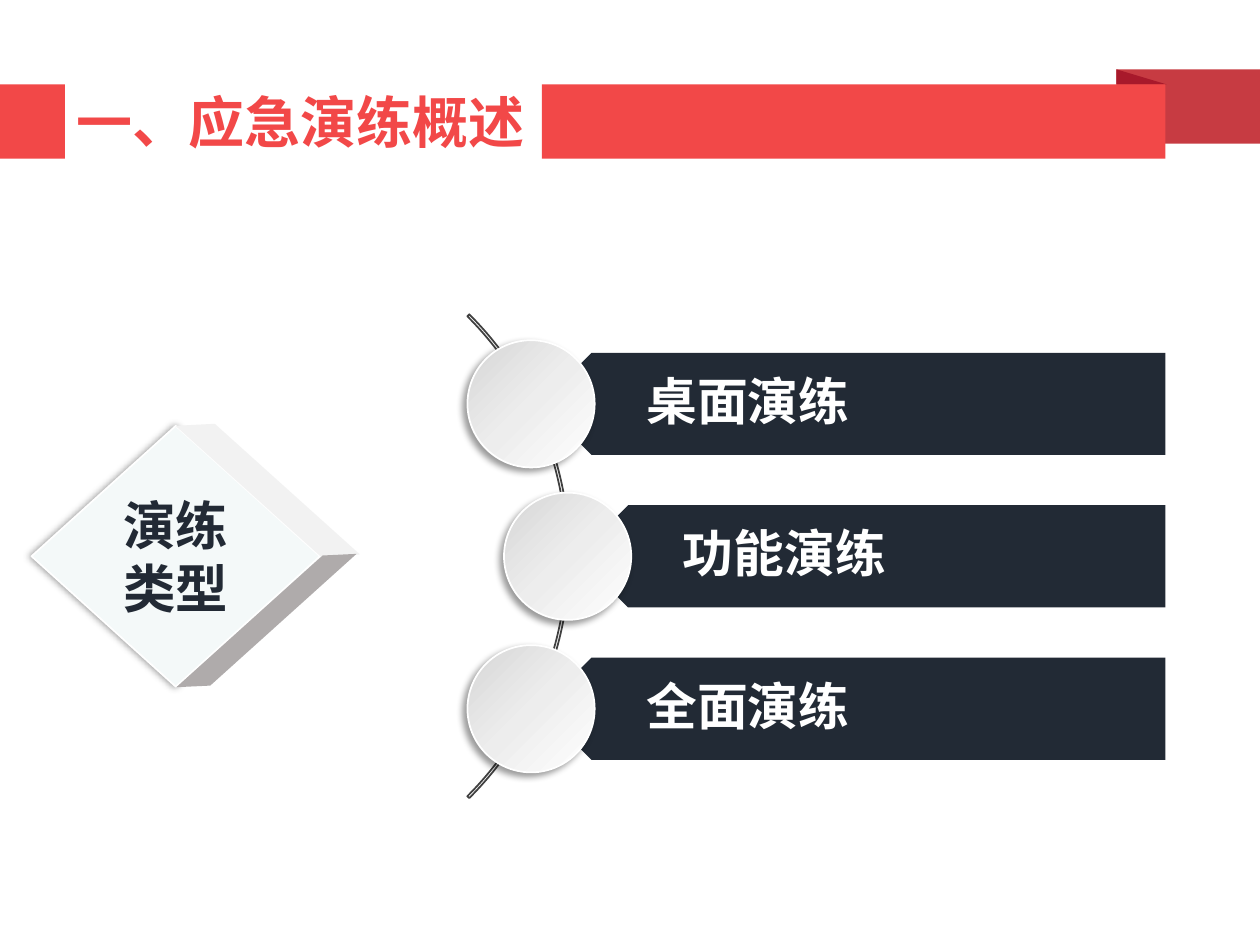
"""Build the slide on the types of emergency drill."""
from dataclasses import dataclass
from typing import Optional

from lxml import etree
from pptx import Presentation
from pptx import util as u
from pptx.dml.color import RGBColor
from pptx.enum import shapes, text
from pptx.oxml import parse_xml
from pptx.oxml.ns import nsdecls, qn

COLUMNS, ROWS = 100, 75
CELL = u.Inches(0.1)
FONT = "DejaVu Sans"
KIND = shapes.MSO_SHAPE
ALIGN = text.PP_ALIGN
COLORS = {
    "red": "F24848", "fold": "C73B42", "crease": "A8192B",
    "navy": "222A35", "white": "FFFFFF", "arc": "404040",
    "face": "F4F9F9", "light_side": "F2F2F2", "dark_side": "AFABAB",
    "pearl": "EDEDED", "silver": "D6D6D6", "black": "000000",
}


@dataclass(frozen=True)
class Block:
    kind: shapes.MSO_SHAPE
    left: float
    top: float
    width: float
    height: float
    fill: Optional[str] = None
    line: Optional[str] = None
    rotation: float = 0
    flip_v: bool = False
    adjust: tuple = ()


@dataclass(frozen=True)
class Drill:
    label: str
    left: float


BANNER = (
    Block(KIND.RECTANGLE, 0, 6.7, 5.15, 5.9, "red"),
    Block(KIND.RECTANGLE, 88.6, 5.5, 11.4, 5.9, "fold"),
    Block(KIND.RIGHT_TRIANGLE, 88.6, 5.5, 4, 1.2, "crease"),
    Block(KIND.RECTANGLE, 43, 6.7, 49.5, 5.9, "red"),
)
ARC = Block(KIND.BLOCK_ARC, -9.1, 17, 54.3, 54.3, line="arc", adjust=(189, 27, 0.004))
DIAMOND = Block(KIND.FLOWCHART_DECISION, 2.5, 33.8, 22.9, 20.7, "face", "white")
SIDES = (
    Block(KIND.PARALLELOGRAM, 12.4, 37.8, 17.7, 2.2, "light_side", rotation=222, adjust=(1,)),
    Block(KIND.PARALLELOGRAM, 12.3, 48.4, 17.7, 1.7, "dark_side", rotation=318,
          flip_v=True, adjust=(1.22,)),
)
DRILLS = (Drill("桌面演练", 42.9), Drill("功能演练", 45.8), Drill("全面演练", 42.9))
FIRST_ROW, ROW_STEP = 32.05, 12.1
TAG_RIGHT, TAG_HEIGHT, DISC_SIZE, DISC_SHIFT = 92.5, 8.1, 10.1, 5.8


def cells(count: float) -> int:
    """Convert grid cells to a length."""
    return round(count * CELL)


def color(name: str) -> RGBColor:
    """Look up a named colour."""
    return RGBColor.from_string(COLORS[name])


def apply(target, values: dict) -> None:
    """Set each attribute named in the format values."""
    for name, value in values.items():
        setattr(target, name, value)


def write(box, words: str, size: float, ink: str, frame: dict, para_format: dict) -> None:
    """Write one bold paragraph into a shape."""
    apply(box.text_frame, {"vertical_anchor": text.MSO_ANCHOR.MIDDLE, **frame})
    para = box.text_frame.paragraphs[0]
    apply(para, para_format)
    span = para.add_run()
    span.text = words
    apply(span.font, {"name": FONT, "size": u.Pt(size), "bold": True})
    span.font.color.rgb = color(ink)


def paint(box, fill: Optional[str], line: Optional[str]) -> None:
    """Give a shape its plain fill and outline."""
    box.shadow.inherit = False
    if fill:
        box.fill.solid()
        box.fill.fore_color.rgb = color(fill)
    else:
        box.fill.background()
    if line:
        box.line.color.rgb = color(line)
        box.line.width = u.Pt(1)
    else:
        box.line.fill.background()


def draw(page, block: Block):
    """Draw one preset shape on the grid."""
    box = page.shapes.add_shape(
        block.kind, *map(cells, (block.left, block.top, block.width, block.height)))
    paint(box, block.fill, block.line)
    box.rotation = block.rotation
    for index, value in enumerate(block.adjust):
        box.adjustments[index] = value
    if block.flip_v:
        box._element.spPr.find(qn("a:xfrm")).set("flipV", "1")
    return box


def cast_shadow(box, distance: float, angle: int) -> None:
    """Add a soft outer shadow."""
    effects = box._element.spPr.find(qn("a:effectLst"))
    shadow = etree.SubElement(
        effects, qn("a:outerShdw"), blurRad=str(u.Pt(4)), dist=str(u.Pt(distance)),
        dir=str(angle * 60000), algn="ctr", rotWithShape="0")
    tint = etree.SubElement(shadow, qn("a:srgbClr"), val=COLORS["black"])
    etree.SubElement(tint, qn("a:alpha"), val="40000")


def shade(box) -> None:
    """Replace the plain fill by a round gradient from the lower right."""
    stops = "".join(
        f'<a:gs pos="{place * 1000}"><a:srgbClr val="{COLORS[name]}"/></a:gs>'
        for place, name in ((0, "white"), (50, "pearl"), (100, "silver")))
    gradient = parse_xml(
        f'<a:gradFill {nsdecls("a")} rotWithShape="1"><a:gsLst>{stops}</a:gsLst>'
        '<a:path path="circle"><a:fillToRect l="100000" t="100000"/></a:path></a:gradFill>')
    properties = box._element.spPr
    properties.replace(properties.find(qn("a:solidFill")), gradient)


def draw_drill(page, drill: Drill, middle: float) -> None:
    """Draw a pointed tag with its disc."""
    half = TAG_HEIGHT / 2
    shoulder, top, bottom = drill.left + half, middle - half, middle + half
    outline = [(shoulder, top), (drill.left, middle), (shoulder, bottom), (TAG_RIGHT, bottom)]
    builder = page.shapes.build_freeform(cells(TAG_RIGHT), cells(top))
    builder.add_line_segments([(cells(x), cells(y)) for x, y in outline], close=True)
    tag = builder.convert_to_shape()
    paint(tag, "navy", None)
    margin = cells(0.8)
    write(tag, drill.label, 29, "white",
          {"word_wrap": True, "margin_left": cells(8.4), "margin_right": margin,
           "margin_top": margin, "margin_bottom": margin},
          {"alignment": ALIGN.LEFT, "line_spacing": 0.9})
    disc = draw(page, Block(KIND.OVAL, drill.left - DISC_SHIFT, middle - DISC_SIZE / 2,
                            DISC_SIZE, DISC_SIZE, "white", "white"))
    shade(disc)
    cast_shadow(disc, 3, 135)


def main() -> None:
    """Build and save the deck."""
    deck = Presentation()
    apply(deck, {"slide_width": COLUMNS * CELL, "slide_height": ROWS * CELL})
    page = deck.slides.add_slide(deck.slide_layouts[5])
    title = page.shapes.title
    apply(title, {"left": cells(5.1), "top": cells(6.4),
                  "width": cells(43.6), "height": cells(6.4)})
    write(title, "一、应急演练概述", 32, "red",
          {"word_wrap": False, "auto_size": text.MSO_AUTO_SIZE.SHAPE_TO_FIT_TEXT},
          {"alignment": ALIGN.LEFT})
    for block in BANNER:
        draw(page, block)
    draw(page, ARC)
    for index, drill in enumerate(DRILLS):
        draw_drill(page, drill, FIRST_ROW + index * ROW_STEP)
    diamond = draw(page, DIAMOND)
    cast_shadow(diamond, 1, 180)
    write(diamond, "演练类型", 30, "navy", {"word_wrap": True}, {"alignment": ALIGN.CENTER})
    for block in SIDES:
        draw(page, block)
    deck.save("out.pptx")


if __name__ == "__main__":
    main()
